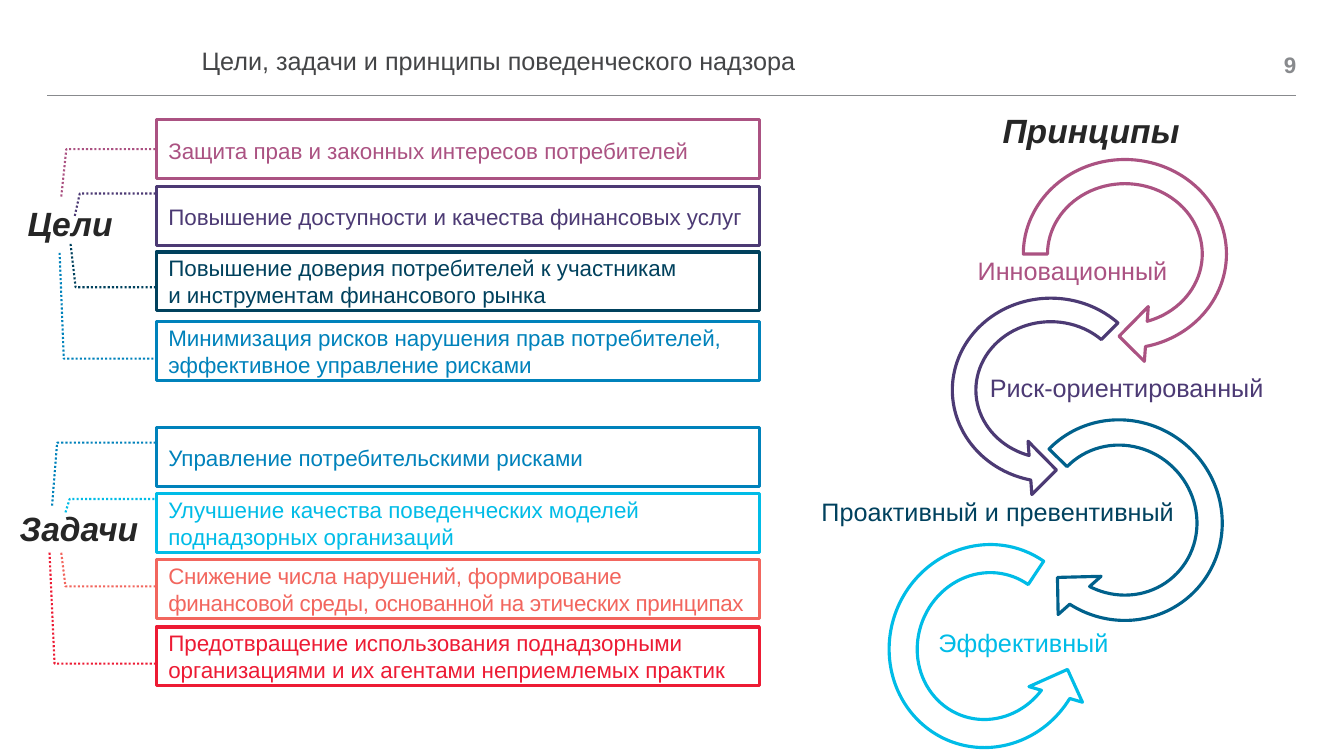
"""Slide on the goals, tasks and principles of conduct supervision."""
from dataclasses import dataclass

from lxml.etree import SubElement
from pptx import Presentation
from pptx.dml.color import RGBColor
from pptx.enum.dml import MSO_LINE
from pptx.enum.shapes import MSO_CONNECTOR, MSO_SHAPE
from pptx.enum.text import MSO_ANCHOR as Anchor, PP_ALIGN as Align
from pptx.oxml.ns import qn
from pptx.util import Emu, Inches, Pt

COLS, ROWS = 160, 90
WIDTH, HEIGHT = Inches(13.333), Inches(7.5)
BOX_X, BOX_W, BOX_H = 18.6, 71.8, 7
TEXT_X, TEXT_W = 20.04, 70
DARK, GREY = "262626", "888A8D"
HEADING = {"size": Pt(24), "bold": True, "italic": True}


@dataclass
class Item:
    """A framed statement with its dotted leader."""
    text: str
    color: str
    top: float
    start: tuple[float, float]
    elbow: tuple[float, float]
    spacing: int = 0


@dataclass
class Principle:
    """A circular arrow with its caption."""
    text: str
    color: str
    text_color: str
    label: tuple[float, float, float]
    frame: tuple[float, float, float, float]
    adjustments: tuple[float, ...]
    kind: MSO_SHAPE = MSO_SHAPE.CIRCULAR_ARROW
    rotation: float = 0
    flip: bool = False


@dataclass
class Heading:
    """A bold italic caption of a block."""
    text: str
    x: float
    y: float
    w: float


HEADINGS = [
    Heading("Цели", 2.15, 24.1, 12.4),
    Heading("Задачи", 2, 60.5, 14.8),
    Heading("Принципы", 115.44, 13.1, 28.9),
]
ITEMS = [
    Item("Защита прав и законных интересов потребителей",
         "AB5282", 14.28, (7.3, 23.4), (7.9, 17.76)),
    Item("Повышение доступности и качества финансовых услуг",
         "4C3A74", 22.2, (8.9, 25.7), (9.5, 23.04)),
    Item("Повышение доверия потребителей к участникам\nи инструментам финансового рынка",
         "00415D", 30, (8.4, 29.04), (9, 34.2)),
    Item("Минимизация рисков нарушения прав потребителей, эффективное управление рисками",
         "0082BB", 38.28, (7.1, 30.1), (7.6, 42.7)),
    Item("Управление потребительскими рисками",
         "0082BB", 50.88, (6.2, 60.2), (6.8, 52.7)),
    Item("Улучшение качества поведенческих моделей поднадзорных организаций",
         "00BCE7", 58.8, (7.8, 61), (8.3, 59.4)),
    Item("Снижение числа нарушений, формирование\n"
         "финансовой среды, основанной на этических принципах",
         "F2665E", 66.6, (7.3, 65.8), (7.8, 69.8), -20),
    Item("Предотвращение использования поднадзорными "
         "организациями и их агентами неприемлемых практик",
         "ED1B34", 74.64, (5.9, 65.8), (6.5, 79)),
]
TURN = (0.11, 11.42, 45, 108, 0.125)
PRINCIPLES = [
    Principle("Инновационный", "AB5282", "AB5282", (116.4, 30.36, 29.6),
              (120, 17.16, 27.84, 26.16), TURN),
    Principle("Риск-ориентированный", "4C3A74", "4C3A74", (117.84, 44.28, 41.4),
              (111.6, 33.72, 27, 25.44), (0.11, 11.42, 63, 189, 0.125),
              MSO_SHAPE.LEFT_CIRCULAR_ARROW),
    Principle("Эффективный", "00BCE7", "00BCE7", (111.72, 74.64, 44.3),
              (104.28, 63.12, 26.52, 27.6), (0.126, 11.42, 207.62, 46.62, 0.125),
              rotation=21.3, flip=True),
    Principle("Проактивный и превентивный", "00618C", "00415E", (97.8, 59.04, 44.3),
              (119.52, 48.24, 28.08, 27.36), TURN, rotation=44.3),
]


def rgb(color: str) -> RGBColor:
    """Turn a hex string into a colour."""
    return RGBColor.from_string(color)


def col(n: float) -> Emu:
    """Length of n grid columns."""
    return Emu(round(WIDTH * n / COLS))


def row(n: float) -> Emu:
    """Length of n grid rows."""
    return Emu(round(HEIGHT * n / ROWS))


def place(x: float, y: float, w: float, h: float) -> tuple[Emu, Emu, Emu, Emu]:
    """Frame of a cell range of the grid."""
    return col(x), row(y), col(w), row(h)


def apply(target: object, values: dict) -> None:
    """Set attributes from a dict of format values."""
    for name, value in values.items():
        setattr(target, name, value)


def write(tf, text: str, color: str, font: dict, spacing: int = 0, anchor=Anchor.TOP, **para) -> None:
    """Fill a text frame with one formatted paragraph."""
    apply(tf, {"word_wrap": True, "vertical_anchor": anchor, "margin_left": 0,
               "margin_right": 0, "margin_top": 0, "margin_bottom": 0})
    p = tf.paragraphs[0]
    p.text = text
    apply(p, {"alignment": Align.LEFT, **para})
    for r in p.runs:
        apply(r.font, {"name": "Arial", **font})
        r.font.color.rgb = rgb(color)
        if spacing:
            r.font._element.set("spc", str(spacing))


def add_text(s, frame: tuple[float, float, float, float], *args, **kwargs) -> None:
    """Add a text box on the grid."""
    write(s.shapes.add_textbox(*place(*frame)).text_frame, *args, **kwargs)


def outline(sp, color: str, width: float = 2.25) -> None:
    """Draw a shape's outline without shadow."""
    sp.shadow.inherit = False
    sp.line.color.rgb = rgb(color)
    sp.line.width = Pt(width)


def add_outlined(s, kind: MSO_SHAPE, frame: tuple[float, float, float, float], color: str):
    """Add a white shape with a coloured outline."""
    sp = s.shapes.add_shape(kind, *place(*frame))
    sp.fill.solid()
    sp.fill.fore_color.rgb = rgb("FFFFFF")
    outline(sp, color)
    return sp


def add_item(s, item: Item) -> None:
    """Draw the frame, statement and leader of an item."""
    add_outlined(s, MSO_SHAPE.RECTANGLE, (BOX_X, item.top, BOX_W, BOX_H), item.color)
    offset = 0.3 if len(item.text) > 50 else 2
    add_text(s, (TEXT_X, item.top + offset, TEXT_W, 3.7), item.text, item.color,
             {"size": Pt(16)}, item.spacing)
    builder = s.shapes.build_freeform(col(item.start[0]), row(item.start[1]))
    bends = [item.elbow, (BOX_X, item.elbow[1])]
    builder.add_line_segments([(col(x), row(y)) for x, y in bends], close=False)
    sp = builder.convert_to_shape()
    sp.fill.background()
    outline(sp, item.color, 1.5)
    sp.line.dash_style = MSO_LINE.ROUND_DOT


def add_arrow(s, item: Principle) -> None:
    """Draw the circular arrow of a principle."""
    sp = add_outlined(s, item.kind, item.frame, item.color)
    sp.rotation = item.rotation
    for i, value in enumerate(item.adjustments):
        sp.adjustments[i] = value
    if item.flip:
        sp.element.spPr.find(qn("a:xfrm")).set("flipV", "1")


def main() -> None:
    """Build and save the slide."""
    prs = Presentation()
    apply(prs, {"slide_width": WIDTH, "slide_height": HEIGHT})
    s = prs.slides.add_slide(prs.slide_layouts[5])
    title = s.shapes.title
    apply(title, dict(zip(("left", "top", "width", "height"), place(24, 4.2, 120.24, 6.5))))
    write(title.text_frame, "Цели, задачи и принципы поведенческого надзора", "444547",
          {"size": Pt(18)}, anchor=Anchor.MIDDLE, line_spacing=0.9)
    rule = s.shapes.add_connector(MSO_CONNECTOR.STRAIGHT, col(5.64), row(11.4), col(154.32), row(11.4))
    rule.line.color.rgb = rgb(GREY)
    rule.line.width = Pt(0.5)
    SubElement(rule.element.spPr, qn("a:effectLst"))
    add_text(s, (144.6, 5.64, 9.72, 4.2), "9", GREY, {"size": Pt(16), "bold": True},
             anchor=Anchor.MIDDLE, alignment=Align.RIGHT)
    for h in HEADINGS:
        add_text(s, (h.x, h.y, h.w, 3.4), h.text, DARK, HEADING, alignment=Align.CENTER)
    for item in ITEMS:
        add_item(s, item)
    for item in PRINCIPLES:
        add_arrow(s, item)
    for item in PRINCIPLES:
        add_text(s, (*item.label, 3.5), item.text, item.text_color, {"size": Pt(18)})
    prs.save("out.pptx")


if __name__ == "__main__":
    main()
